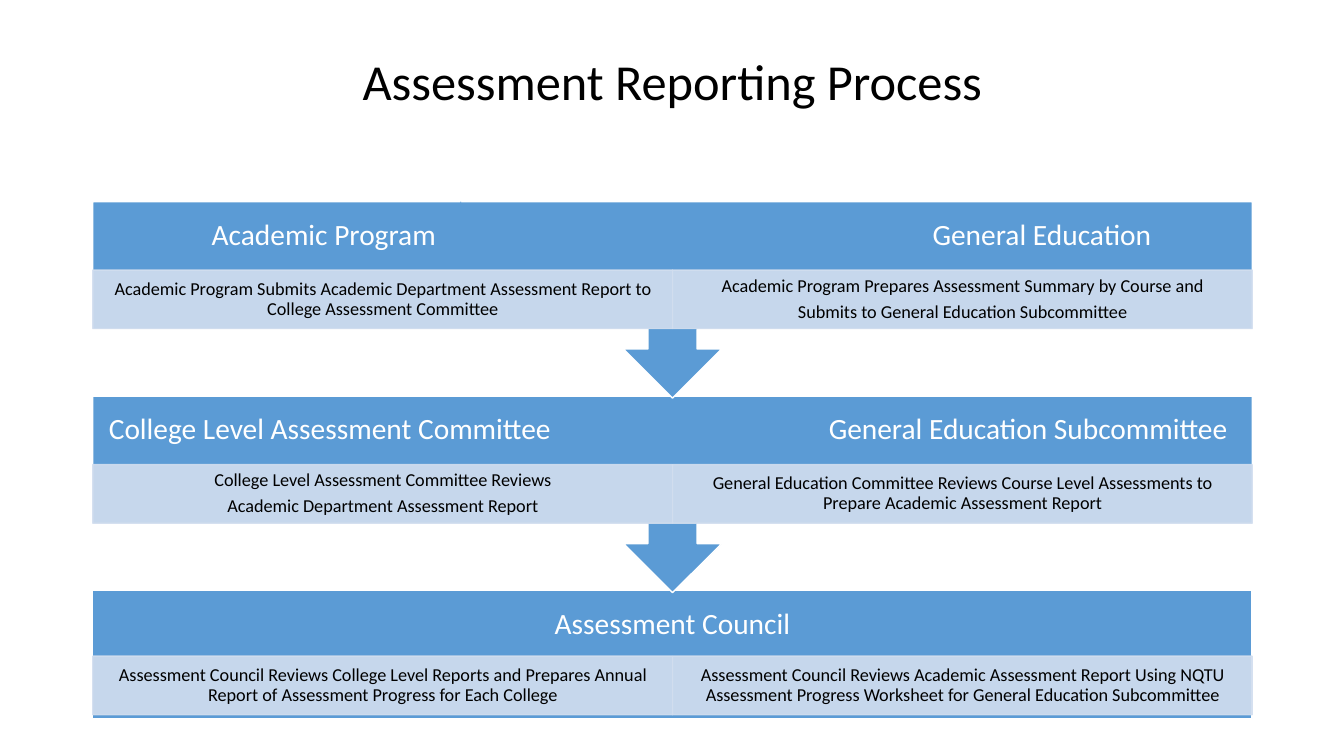
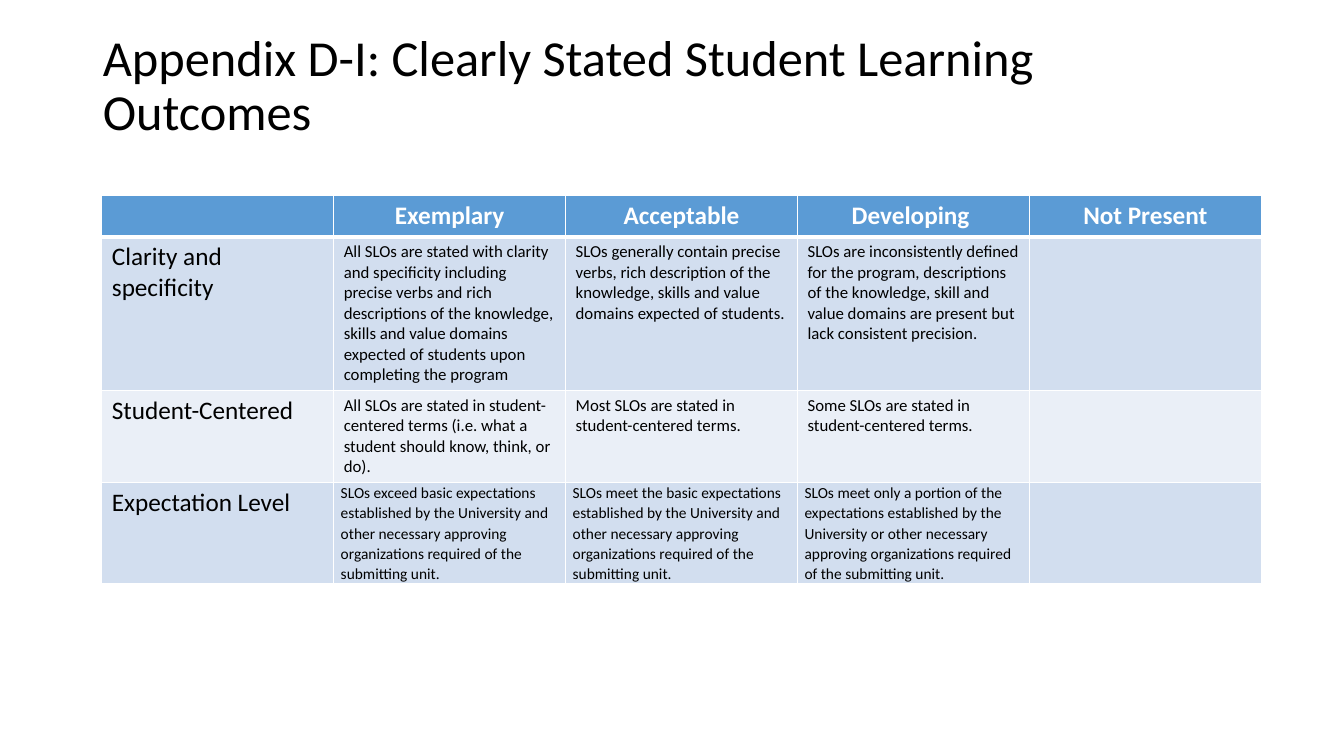
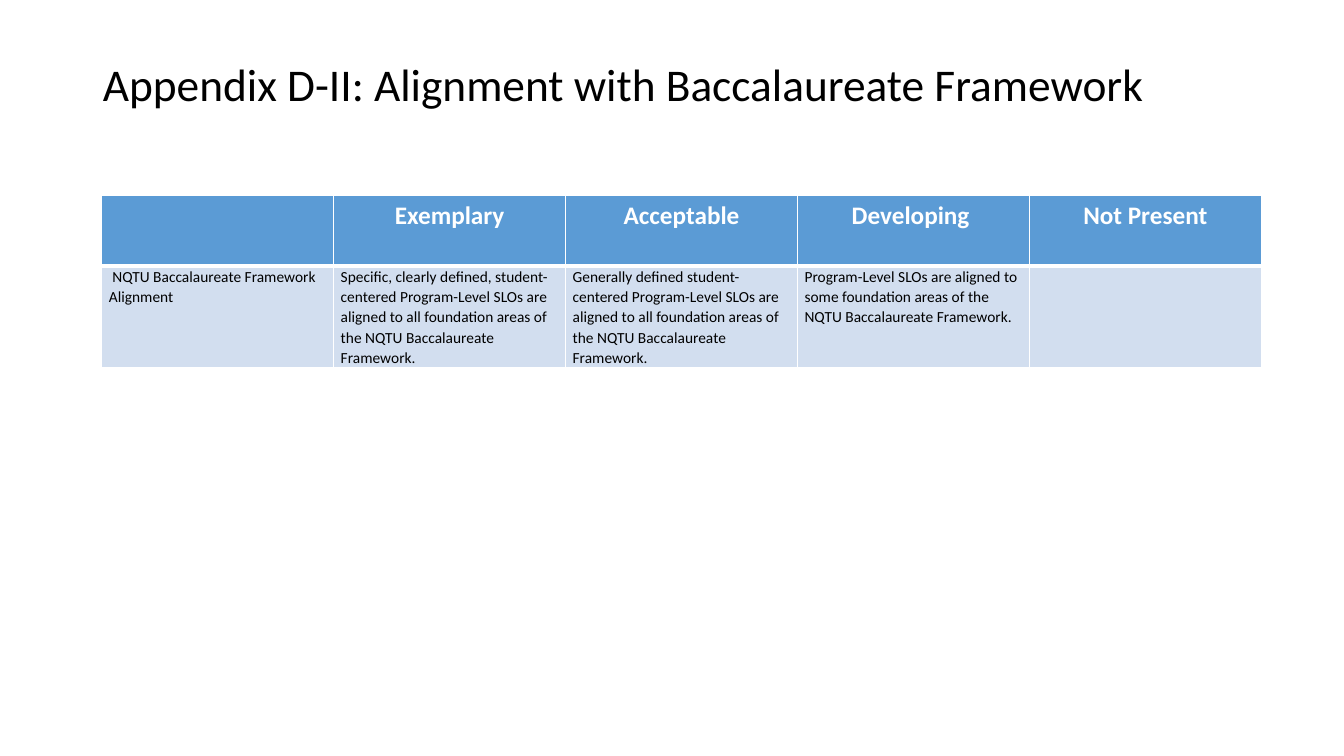
from lxml.etree import SubElement
from pptx import Presentation
from pptx.dml.color import RGBColor
from pptx.enum.shapes import MSO_CONNECTOR as Connector, MSO_SHAPE as Preset
from pptx.enum.text import MSO_ANCHOR as Anchor, MSO_AUTO_SIZE as AutoSize, PP_ALIGN as Align
from pptx.oxml.ns import qn
from pptx.util import Inches, Pt

COLOURS = {
    "blue": "5B9BD5",
    "band": "D2DEEF",
    "pale": "EAEFF7",
    "white": "FFFFFF",
    "black": "000000",
}
FONT = "Calibri"
LEFT, WIDTH = 0.92, 11.5
TABLE_LEFT, TABLE_TOP = 1.01, 1.94
COLUMN_HEADS = ["", "Exemplary", "Acceptable", "Developing ", "Not Present"]
TIGHT_SIZE = 11

COUNCIL_DETAILS = [
    ["Assessment Council Reviews College Level Reports and Prepares Annual "
     "Report of Assessment Progress for Each College"],
    ["Assessment Council Reviews Academic Assessment Report Using NQTU "
     "Assessment Progress Worksheet for General Education Subcommittee"],
]
STEPS = [
    (3.93, "College Level Assessment Committee\tGeneral Education Subcommittee", [7.14], [
        ["College Level Assessment Committee Reviews",
         "Academic Department Assessment Report"],
        ["General Education Committee Reviews Course Level Assessments to "
         "Prepare Academic Assessment Report"],
    ]),
    (2, "\tAcademic Program\tGeneral Education", [1.02, 8.17], [
        ["Academic Program Submits Academic Department Assessment Report to "
         "College Assessment Committee"],
        ["Academic Program Prepares Assessment Summary by Course and",
         "Submits to General Education Subcommittee"],
    ]),
]
OUTCOME_ROWS = [
    (1.52, 18, 12, [
        "Clarity and specificity",
        "All SLOs are stated with clarity and specificity including precise verbs and rich "
        "descriptions of the knowledge, skills and value domains expected of students upon "
        "completing the program",
        "SLOs generally contain precise verbs, rich description of the knowledge, skills and "
        "value domains expected of students.",
        "SLOs are inconsistently defined for the program, descriptions of the knowledge, skill "
        "and value domains are present but lack consistent precision.",
        "",
    ]),
    (0.91, 18, 12, [
        "Student-Centered",
        "All SLOs are stated in student-centered terms (i.e. what a student should know, "
        "think, or do).",
        "Most SLOs are stated in student-centered terms.",
        "Some SLOs are stated in student-centered terms.",
        "",
    ]),
    (1, 18, TIGHT_SIZE, [
        "Expectation Level",
        "SLOs exceed basic expectations established by the University and other necessary "
        "approving organizations required of the submitting unit.",
        "SLOs meet the basic expectations established by the University and other necessary "
        "approving organizations required of the submitting unit.",
        "SLOs meet only a portion of the expectations established by the University or other "
        "necessary approving organizations required of the submitting unit.",
        "",
    ]),
]
FRAMEWORK_ROWS = [
    (1, TIGHT_SIZE, TIGHT_SIZE, [
        " NQTU Baccalaureate Framework Alignment",
        "Specific, clearly defined, student-centered Program-Level SLOs are aligned to all "
        "foundation areas of the NQTU Baccalaureate Framework.",
        "Generally defined student-centered Program-Level SLOs are aligned to all foundation "
        "areas of the NQTU Baccalaureate Framework.",
        "Program-Level SLOs are aligned to some foundation areas of the NQTU Baccalaureate "
        "Framework.",
        "",
    ]),
]


def colour(name):
    """Return the named palette colour."""
    return RGBColor.from_string(COLOURS[name])


class Deck:
    """Hold the presentation style and the slide being built."""

    def __init__(self):
        """Start a wide presentation."""
        self.presentation = Presentation()
        self.presentation.slide_width = Inches(13.33)
        self.presentation.slide_height = Inches(7.5)
        self.slide = None
        self.group = None

    def add_slide(self, title, size=36, align=Align.LEFT, height=0.93):
        """Add a slide and fill its title placeholder."""
        self.slide = self.presentation.slides.add_slide(self.presentation.slide_layouts[5])
        shape = self.slide.shapes.title
        shape.left, shape.top = Inches(LEFT), Inches(0.4)
        shape.width, shape.height = Inches(WIDTH), Inches(height)
        shape.text_frame.auto_size = AutoSize.NONE
        shape.text_frame.vertical_anchor = Anchor.MIDDLE
        self.add_text(shape.text_frame, [title], size, align=align, spacing=0.9)

    def add_text(self, frame, lines, size, ink="black", align=Align.LEFT, bold=False,
                 spacing=None, after=None):
        """Add one formatted paragraph for each line."""
        for index, line in enumerate(lines):
            paragraph = frame.add_paragraph() if index else frame.paragraphs[0]
            paragraph.alignment = align
            if spacing:
                paragraph.line_spacing = spacing
            if after:
                paragraph.space_after = Pt(after)
            run = paragraph.add_run()
            run.text = line
            run.font.name = FONT
            run.font.size = Pt(size)
            run.font.bold = bold
            run.font.color.rgb = colour(ink)

    def block(self, preset, left, top, width, height, fill, line, opacity=None):
        """Add a filled preset shape to the diagram."""
        shape = self.group.shapes.add_shape(
            preset, Inches(left), Inches(top), Inches(width), Inches(height))
        shape.shadow.inherit = False
        shape.fill.solid()
        shape.fill.fore_color.rgb = colour(fill)
        shape.line.color.rgb = colour(line)
        shape.line.width = Pt(1)
        if opacity:
            for tint in list(shape.element.spPr.iter(qn("a:srgbClr"))):
                SubElement(tint, qn("a:alpha"), val=str(opacity * 1000))
        return shape

    def fit(self, frame, side, end):
        """Centre a text frame vertically and set its insets."""
        frame.word_wrap = True
        frame.vertical_anchor = Anchor.MIDDLE
        frame.margin_left = frame.margin_right = Inches(side)
        frame.margin_top = frame.margin_bottom = Inches(end)

    def heading(self, top, text, align, stops=()):
        """Add the white heading of a step, with its tab stops."""
        box = self.group.shapes.add_textbox(
            Inches(LEFT), Inches(top), Inches(WIDTH), Inches(0.68))
        self.fit(box.text_frame, 0.16, 0.16)
        self.add_text(box.text_frame, [text], 21, "white", align, spacing=0.9, after=7.35)
        if stops:
            properties = box.text_frame.paragraphs[0]._p.get_or_add_pPr()
            tabs = SubElement(properties, qn("a:tabLst"))
            for stop in stops:
                SubElement(tabs, qn("a:tab"), pos=str(Inches(stop)), algn="l")

    def details(self, top, texts):
        """Add the row of pale boxes below a heading."""
        width = WIDTH / len(texts)
        for index, lines in enumerate(texts):
            shape = self.block(Preset.RECTANGLE, LEFT + index * width, top, width, 0.58,
                               "band", "band", opacity=90)
            self.fit(shape.text_frame, 0.1, 0.02)
            self.add_text(shape.text_frame, lines, 13, align=Align.CENTER,
                          spacing=0.9, after=4.55)

    def process(self):
        """Draw the reporting steps from last to first."""
        self.group = self.slide.shapes.add_group_shape()
        self.block(Preset.RECTANGLE, LEFT, 5.86, WIDTH, 1.27, "blue", "white")
        self.heading(5.86, "Assessment Council", Align.CENTER)
        self.details(6.51, COUNCIL_DETAILS)
        for top, text, stops, texts in STEPS:
            callout = self.block(Preset.UP_ARROW_CALLOUT, LEFT, top, WIDTH, 1.95,
                                 "blue", "white")
            callout.rotation = 180
            self.heading(top, text, Align.LEFT, stops)
            self.details(top + 0.68, texts)

    def line(self, start, end):
        """Add a thin straight line."""
        connector = self.slide.shapes.add_connector(
            Connector.STRAIGHT, *[Inches(value) for value in (*start, *end)])
        connector.line.color.rgb = colour("blue")
        connector.line.width = Pt(0.5)
        SubElement(connector.element.spPr, qn("a:effectLst"))

    def cell(self, cell, fill, top=1, bottom=1):
        """Give a cell white borders and a fill."""
        properties = cell._tc.get_or_add_tcPr()
        for side, width in (("L", 1), ("R", 1), ("T", top), ("B", bottom)):
            border = SubElement(properties, qn(f"a:ln{side}"), w=str(Pt(width)))
            solid = SubElement(border, qn("a:solidFill"))
            SubElement(solid, qn("a:srgbClr"), val=COLOURS["white"])
        cell.fill.solid()
        cell.fill.fore_color.rgb = colour(fill)

    def rubric(self, head_height, rows):
        """Add a rubric table with a header and banded rows."""
        heights = [head_height] + [row[0] for row in rows]
        table = self.slide.shapes.add_table(
            len(heights), len(COLUMN_HEADS), Inches(TABLE_LEFT), Inches(TABLE_TOP),
            Inches(WIDTH), Inches(sum(heights))).table
        for row, height in zip(table.rows, heights):
            row.height = Inches(height)
        for column, text in enumerate(COLUMN_HEADS):
            cell = table.cell(0, column)
            self.cell(cell, "blue", bottom=3)
            if text:
                self.add_text(cell.text_frame, [text], 18, "white", Align.CENTER, bold=True)
        for index, (_, label_size, size, texts) in enumerate(rows, 1):
            for column, text in enumerate(texts):
                cell = table.cell(index, column)
                self.cell(cell, "band" if index % 2 else "pale", top=3 if index == 1 else 1)
                if text:
                    self.entry(cell, text, size if column else label_size)

    def entry(self, cell, text, size):
        """Add a rubric entry, tightly set at the smallest size."""
        tight = size == TIGHT_SIZE
        if tight:
            cell.margin_left = cell.margin_right = Inches(0.07)
            cell.margin_top = cell.margin_bottom = Inches(0)
        self.add_text(cell.text_frame, [text], size,
                      spacing=1.07 if tight else None, after=8 if tight else None)


def main():
    """Build and save the presentation."""
    deck = Deck()
    deck.add_slide("Assessment Reporting Process", align=Align.CENTER, height=0.88)
    deck.process()
    deck.line((4.57, 2), (4.56, 2.56))
    deck.add_slide("Appendix D-I: Clearly Stated Student Learning Outcomes")
    deck.rubric(0.41, OUTCOME_ROWS)
    deck.add_slide("Appendix D-II: Alignment with Baccalaureate Framework", size=32.4)
    deck.rubric(0.7, FRAMEWORK_ROWS)
    deck.presentation.save("out.pptx")


if __name__ == "__main__":
    main()
